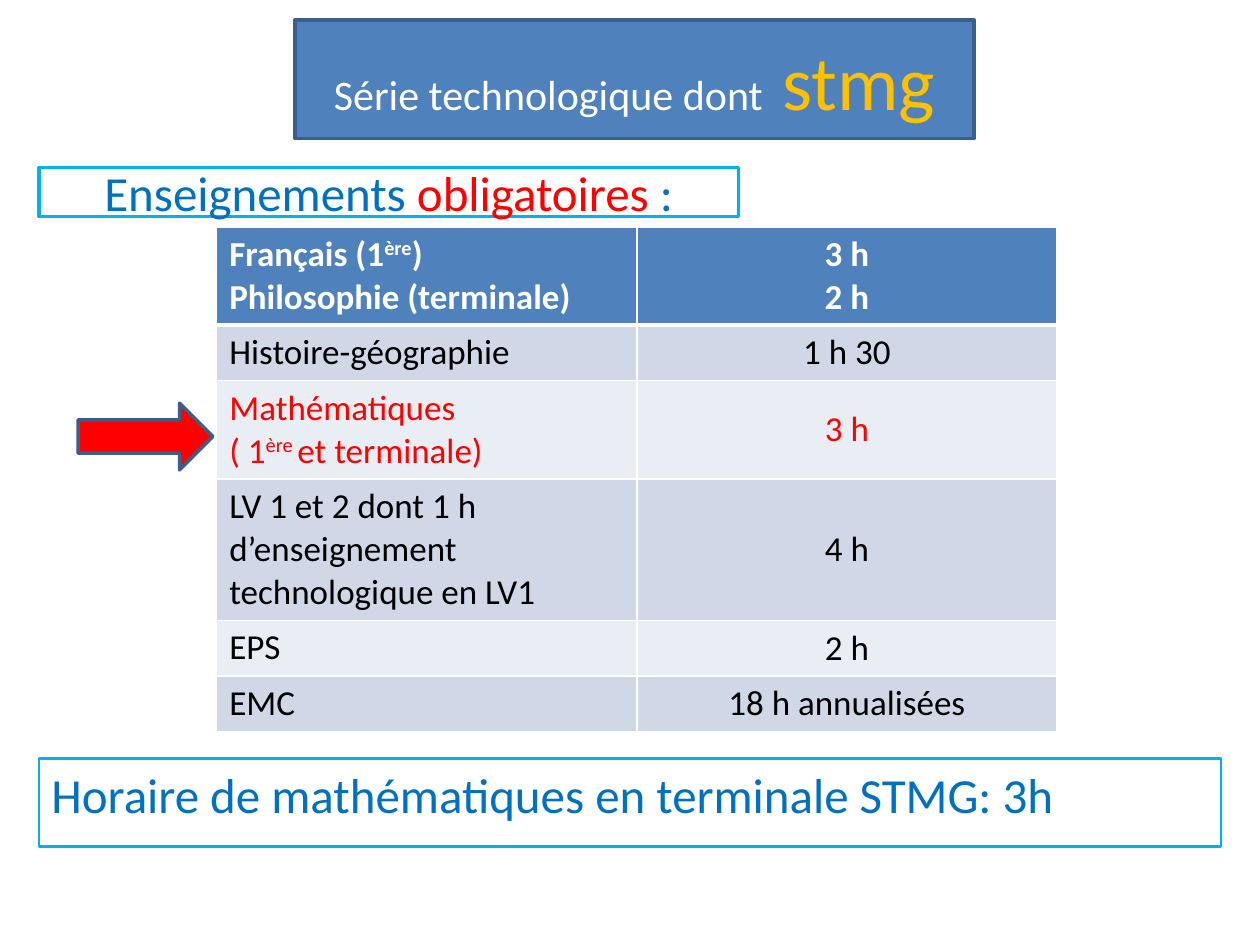
from collections import namedtuple

from lxml.etree import SubElement
from pptx import Presentation
from pptx.dml.color import RGBColor
from pptx.enum.shapes import MSO_SHAPE as Shape
from pptx.enum.text import MSO_ANCHOR as Anchor, PP_ALIGN as Align
from pptx.oxml.ns import qn
from pptx.util import Inches, Pt

WIDTH, HEIGHT = Inches(10), Inches(7.5)
COLUMN, ROW = WIDTH / 100, HEIGHT / 75
BLUE, NAVY, CYAN, INK = "4F81BD", "3A5F8C", "00B0F0", "0070C0"
RED, GOLD, WHITE, BLACK = "FF0000", "FFC000", "FFFFFF", "000000"
BANDS = ("E9EDF4", "D0D8E8")
Box = namedtuple("Box", "left top width height")

SUBJECTS = [
    ([["Français (1", ("ère", {"baseline": 30}), ")"], ["Philosophie (terminale)"]],
     [["3 h"], ["2 h"]], 7),
    ([["Histoire-géographie"]], [["1 h 30"]], 4),
    ([["Mathématiques", "\n", "( 1", ("ère ", {"baseline": 30}), "et terminale)"]],
     [["3 h"]], 7),
    ([["LV 1 et 2 dont 1 h d’enseignement"], ["technologique en LV1"]], [["4 h"]], 10.1),
    ([["EPS"]], [["2 h"]], 4),
    ([["EMC"]], [["18 h annualisées"]], 4),
]
MATHS_ROW = 2


def color(value):
    """Turn a hex string into a colour."""
    return RGBColor.from_string(value)


def grid_box(left, top, width, height):
    """Turn grid columns and rows into a box of lengths."""
    return Box(round(left * COLUMN), round(top * ROW), round(width * COLUMN), round(height * ROW))


def write(frame, paragraphs, size=20, ink=BLACK, bold=False, align=Align.LEFT, before=0):
    """Fill a text frame with paragraphs of plain or specially formatted runs."""
    frame.word_wrap = True
    for index, pieces in enumerate(paragraphs):
        paragraph = frame.add_paragraph() if index else frame.paragraphs[0]
        paragraph.alignment = align
        paragraph.space_before = Pt(before)
        for piece in pieces:
            if piece == "\n":
                paragraph.add_line_break()
                continue
            words, own = (piece, {}) if isinstance(piece, str) else piece
            run = paragraph.add_run()
            run.text = words
            run.font.name = "Calibri"
            run.font.size = Pt(own.get("size", size))
            run.font.bold = bold
            run.font.color.rgb = color(own.get("ink", ink))
            if "baseline" in own:
                run.font._element.set("baseline", str(own["baseline"] * 1000))


def panel(slide, box, outline, fill=None, line_width=2, kind=Shape.RECTANGLE, anchor=Anchor.MIDDLE):
    """Draw a flat outlined shape in the box and return its text frame."""
    shape = slide.shapes.add_shape(kind, *box)
    shape.shadow.inherit = False
    if fill:
        shape.fill.solid()
        shape.fill.fore_color.rgb = color(fill)
    else:
        shape.fill.background()
    shape.line.color.rgb = color(outline)
    shape.line.width = Pt(line_width)
    shape.text_frame.vertical_anchor = anchor
    return shape.text_frame


def title(slide, box):
    """Place the title banner."""
    write(panel(slide, box, NAVY, BLUE),
          [["Série technologique dont  ", ("stmg", {"size": 44, "ink": GOLD})]],
          size=24, ink=WHITE, align=Align.CENTER)


def heading(slide, box):
    """Place the heading of the compulsory subjects."""
    write(panel(slide, box, CYAN, WHITE),
          [["Enseignements ", ("obligatoires", {"ink": RED}), " :"]],
          size=28, ink=INK, align=Align.CENTER)


def conclusion(slide, box):
    """Place the closing statement on mathematics hours."""
    write(panel(slide, box, CYAN, line_width=1.5, anchor=Anchor.TOP),
          [["Horaire de mathématiques en terminale STMG: 3h"]],
          size=28, ink=INK, before=5.6)


def border(cell, bottom):
    """Give a cell white borders with its own bottom width."""
    properties = cell._tc.get_or_add_tcPr()
    for side, points in (("L", 1), ("R", 1), ("T", 1), ("B", bottom)):
        line = SubElement(properties, qn(f"a:ln{side}"), w=str(Pt(points)))
        fill = SubElement(line, qn("a:solidFill"))
        SubElement(fill, qn("a:srgbClr"), val=WHITE)


def timetable(slide, box):
    """Place the table of subjects and weekly hours."""
    table = slide.shapes.add_table(len(SUBJECTS), 2, *box).table
    table.horz_banding = False
    for index, (subject, hours, rows) in enumerate(SUBJECTS):
        header = index == 0
        table.rows[index].height = round(rows * ROW)
        ink = WHITE if header else RED if index == MATHS_ROW else BLACK
        for column, (text, align, anchor) in enumerate(
                ((subject, Align.LEFT, Anchor.TOP), (hours, Align.CENTER, Anchor.MIDDLE))):
            cell = table.cell(index, column)
            border(cell, 3 if header else 1)
            cell.fill.solid()
            cell.fill.fore_color.rgb = color(BLUE if header else BANDS[index % 2])
            cell.vertical_anchor = anchor
            write(cell.text_frame, text, ink=ink, bold=header, align=align)


def maths_arrow(slide, box):
    """Point an arrow at the mathematics row."""
    panel(slide, box, NAVY, RED, kind=Shape.RIGHT_ARROW)


def main():
    """Build and save the slide."""
    deck = Presentation()
    deck.slide_width, deck.slide_height = WIDTH, HEIGHT
    slide = deck.slides.add_slide(deck.slide_layouts[6])
    conclusion(slide, grid_box(3.1, 60.2, 93.8, 7))
    timetable(slide, grid_box(17.2, 18, 66.7, 39.3))
    heading(slide, grid_box(3.1, 13.3, 55.5, 3.9))
    title(slide, grid_box(23.4, 1.6, 53.9, 9.4))
    maths_arrow(slide, grid_box(6.2, 32, 10.7, 5.3))
    deck.save("out.pptx")


if __name__ == "__main__":
    main()
